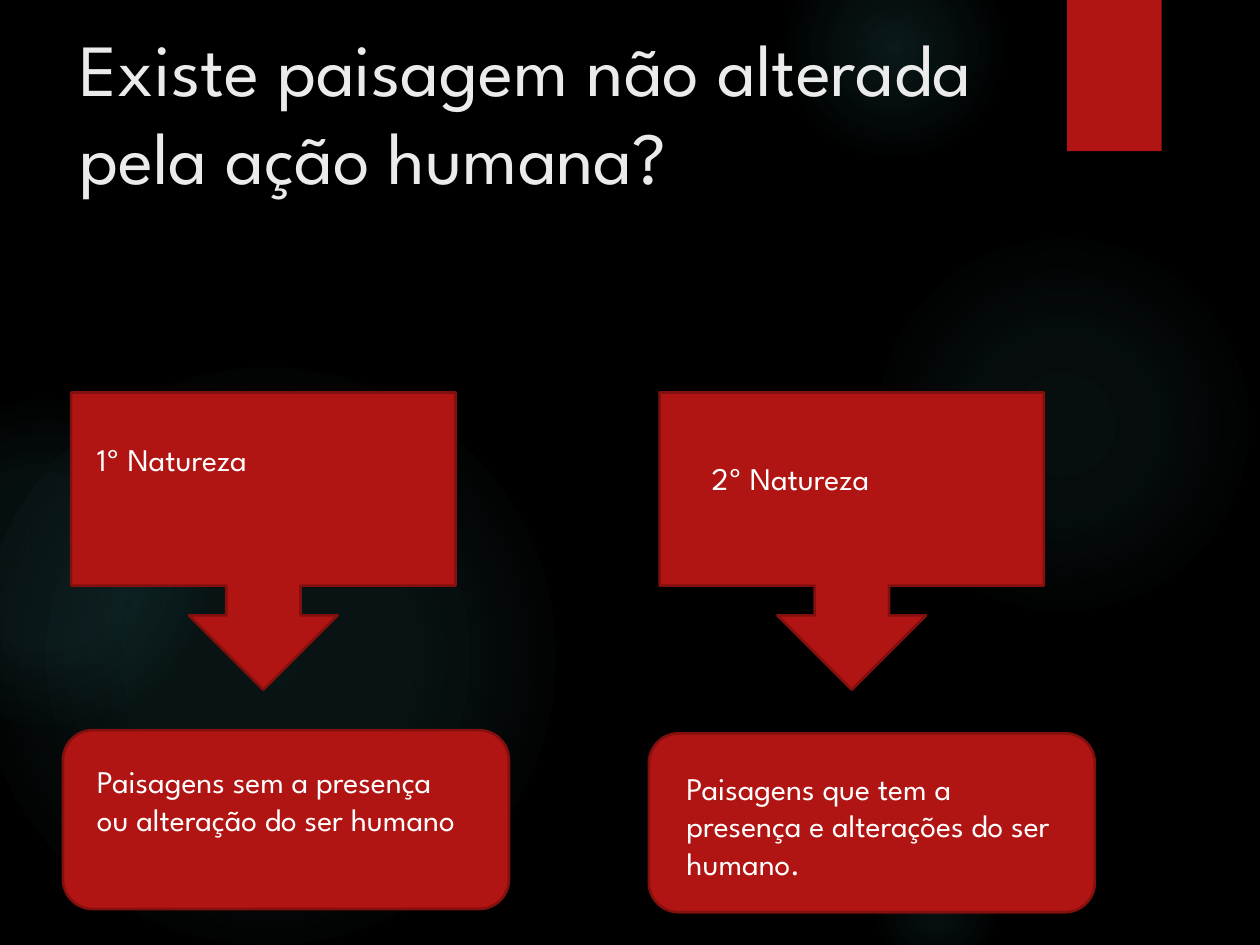
from lxml.etree import SubElement
from pptx import Presentation
from pptx.dml.color import RGBColor
from pptx.enum.shapes import MSO_SHAPE
from pptx.enum.text import MSO_ANCHOR, MSO_AUTO_SIZE, PP_ALIGN
from pptx.oxml.ns import qn
from pptx.util import Pt

BLACK = RGBColor(0x00, 0x00, 0x00)
RED = RGBColor(0xB0, 0x15, 0x13)
DARK_RED = RGBColor(0x82, 0x10, 0x0E)
TEAL = RGBColor(0x50, 0xB9, 0xC1)
OFF_WHITE = RGBColor(0xEB, 0xEB, 0xEB)
WHITE = RGBColor(0xFF, 0xFF, 0xFF)
FONT = "League Spartan"

# Content: places are (left, top, width) or (left, top), in points
TITLE = "Existe paisagem não alterada pela ação humana?"
NATURES = [
    {
        "name": "1º Natureza", "name_at": (48.24, 247.68, 181.44),
        "meaning": "Paisagens sem a presença ou alteração do ser humano",
        "meaning_at": (48.24, 432, 219.6),
        "callout_at": (65.52, 199.44), "panel_at": (36, 417.24),
    },
    {
        "name": "2º Natureza", "name_at": (399.6, 258.48, 197.28),
        "meaning": "Paisagens que tem a presença e alterações do ser humano.",
        "meaning_at": (385.2, 435.6, 232.56),
        "callout_at": (401.76, 199.44), "panel_at": (370.8, 419.04),
    },
]
CALLOUT_SIZE = (169.92, 219.6)
PANEL_SIZE = (254.88, 102.24)
NAME_HEIGHT, MEANING_HEIGHT = 28.8, 72.72

# Background glows: left, top, diameter, (position %, opacity %) stops
GLOWS = [
    (496.08, 131.76, 221.76, [(0, 7), (36, 6), (69, 0)]),
    (447.84, -36, 126, [(0, 14), (36, 7), (73, 0)]),
    (496.08, 480.24, 77.76, [(0, 9), (36, 5), (66, 0)]),
    (-12.24, 210.24, 329.76, [(0, 11), (36, 10), (75, 0)]),
    (-66.24, 228.24, 185.76, [(0, 8), (36, 8), (72, 0)]),
]


def add_block(slide, preset, left, top, width, height, outline=None):
    block = slide.shapes.add_shape(preset, Pt(left), Pt(top), Pt(width), Pt(height))
    block.shadow.inherit = False
    block.fill.solid()
    block.fill.fore_color.rgb = RED
    if outline is None:
        block.line.fill.background()
    else:
        block.line.color.rgb = outline
        block.line.width = Pt(1.5)
    return block


def add_glow(slide, left, top, diameter, stops):
    glow = add_block(slide, MSO_SHAPE.OVAL, left, top, diameter, diameter)
    solid = glow.element.spPr.find(qn("a:solidFill"))
    gradient = SubElement(glow.element.spPr, qn("a:gradFill"), rotWithShape="1")
    solid.getparent().replace(solid, gradient)
    stop_list = SubElement(gradient, qn("a:gsLst"))
    for position, opacity in stops:
        stop = SubElement(stop_list, qn("a:gs"), pos=str(position * 1000))
        color = SubElement(stop, qn("a:srgbClr"), val=str(TEAL))
        SubElement(color, qn("a:alpha"), val=str(opacity * 1000))
    radial = SubElement(gradient, qn("a:path"), path="circle")
    SubElement(radial, qn("a:fillToRect"), l="50000", t="50000", r="50000", b="50000")


def write(frame, text, size, color):
    frame.text = text
    frame.word_wrap = True
    frame.vertical_anchor = MSO_ANCHOR.TOP
    paragraph = frame.paragraphs[0]
    paragraph.alignment = PP_ALIGN.LEFT
    paragraph.font.name = FONT
    paragraph.font.size = Pt(size)
    paragraph.font.color.rgb = color


def add_label(slide, text, left, top, width, height):
    label = slide.shapes.add_textbox(Pt(left), Pt(top), Pt(width), Pt(height))
    write(label.text_frame, text, 18, WHITE)
    label.text_frame.auto_size = MSO_AUTO_SIZE.SHAPE_TO_FIT_TEXT


def main():
    deck = Presentation()
    deck.slide_width, deck.slide_height = Pt(720), Pt(540)
    slide = deck.slides.add_slide(deck.slide_layouts[5])
    slide.background.fill.solid()
    slide.background.fill.fore_color.rgb = BLACK

    # Backdrop: glows and the red tab
    for glow in GLOWS:
        add_glow(slide, *glow)
    add_block(slide, MSO_SHAPE.RECTANGLE, 609.84, 0, 54, 86.4)

    # Title, brought in front of the backdrop
    title = slide.shapes.title
    title.left, title.top, title.width, title.height = Pt(38.16), Pt(9.36), Pt(599.76), Pt(136.8)
    write(title.text_frame, TITLE, 42, OFF_WHITE)
    title.text_frame.auto_size = MSO_AUTO_SIZE.NONE
    title.element.getparent().append(title.element)

    # Each nature: a callout pointing down to its meaning
    for nature in NATURES:
        callout = add_block(slide, MSO_SHAPE.RIGHT_ARROW_CALLOUT,
                            *nature["callout_at"], *CALLOUT_SIZE, DARK_RED)
        callout.rotation = 90
        add_label(slide, nature["name"], *nature["name_at"], NAME_HEIGHT)
        add_block(slide, MSO_SHAPE.ROUNDED_RECTANGLE,
                  *nature["panel_at"], *PANEL_SIZE, DARK_RED)
        add_label(slide, nature["meaning"], *nature["meaning_at"], MEANING_HEIGHT)

    deck.save("out.pptx")


if __name__ == "__main__":
    main()
